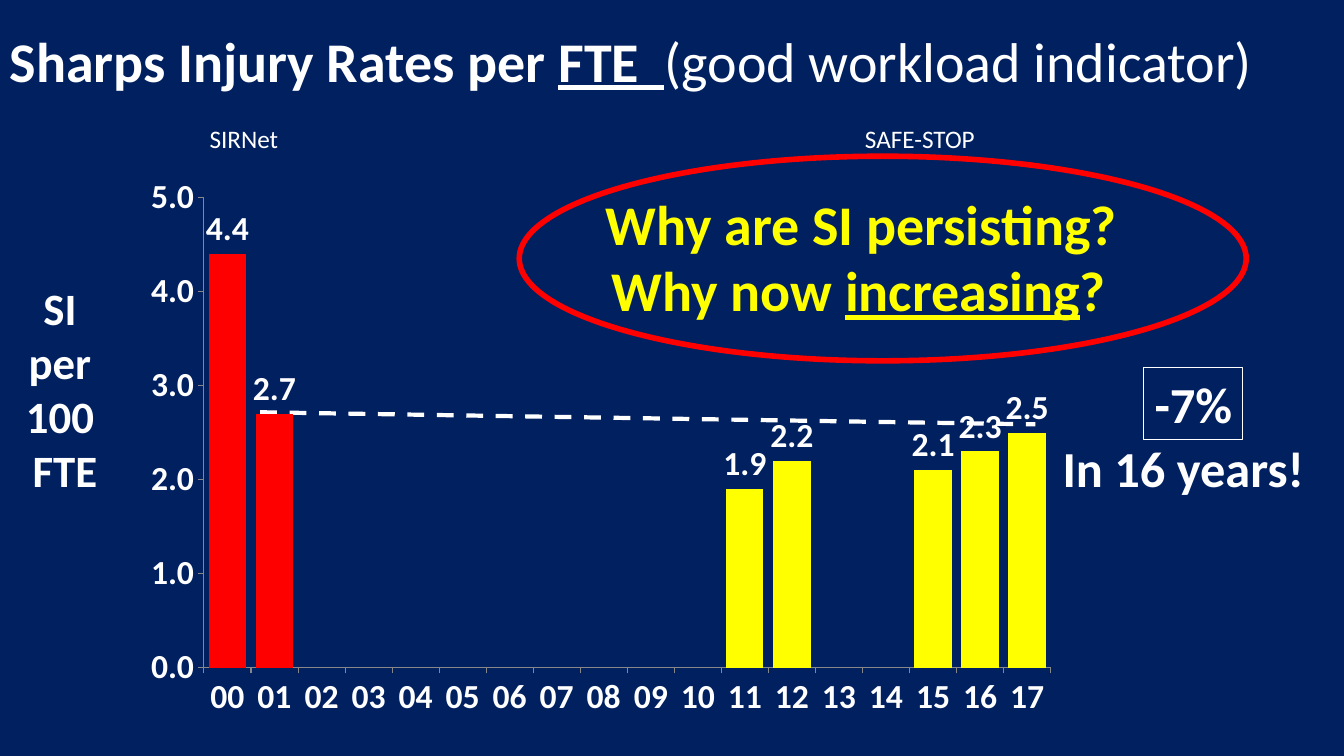
import pptx
import pptx.util
import pptx.dml.color
import pptx.chart.data
import pptx.enum.chart
import pptx.enum.dml
import pptx.enum.shapes
import pptx.enum.text
from lxml import etree

Inches, Pt = pptx.util.Inches, pptx.util.Pt
Shape = pptx.enum.shapes.MSO_SHAPE
Align = pptx.enum.text.PP_ALIGN

FONT = "Calibri"
NAVY, WHITE, RED, YELLOW, GREY = "002060", "FFFFFF", "FF0000", "FFFF00", "878787"

# Each paragraph is a list of (text, format) runs.
UNIT = [[("SI ", {})], [("per ", {})], [("100 ", {})], [("FTE", {})]]
TITLE = [[("Sharps Injury Rates per ", {}), ("FTE  ", {"line": True}),
          ("(good workload indicator)", {"bold": False})]]
WHY = [[("Why are SI persisting?", {})]]
NOW = [[("Why now ", {}), ("increasing", {"line": True}), ("?", {})]]
SPAN = [[("In 16 years!", {})]]
DROP = [[("-7%", {})]]
SOURCES = [("SIRNet", (1.98, 1.17, 0.89, 0.4)),
           ("SAFE-STOP", (8.48, 1.17, 1.36, 0.4))]

YEARS = [f"{year:02d}" for year in range(18)]
RATES = [
    ("Series 1", RED, {"00": 4.4, "01": 2.7}),
    ("Series 2", YELLOW, {"11": 1.9, "12": 2.2, "15": 2.1, "16": 2.3, "17": 2.5}),
]
PLOT = {"x": 0.096, "y": 0.136, "w": 0.903, "h": 0.753}


def rgb(code):
    return pptx.dml.color.RGBColor.from_string(code)


def style(font, size, color=WHITE, bold=True):
    font.name, font.size, font.bold = FONT, Pt(size), bold
    font.color.rgb = rgb(color)


def write(shape, paras, size, color=WHITE, bold=True, align=Align.LEFT):
    frame = shape.text_frame
    frame.word_wrap = False
    frame.auto_size = pptx.enum.text.MSO_AUTO_SIZE.SHAPE_TO_FIT_TEXT
    frame.vertical_anchor = pptx.enum.text.MSO_ANCHOR.TOP
    for i, runs in enumerate(paras):
        para = frame.paragraphs[0] if i == 0 else frame.add_paragraph()
        para.alignment = align
        for text, look in runs:
            run = para.add_run()
            run.text = text
            style(run.font, size, color, look.get("bold", bold))
            run.font.underline = look.get("line", False)


def label(slide, box, paras, size, **look):
    write(slide.shapes.add_textbox(*map(Inches, box)), paras, size, **look)


def outline(slide, kind, box, color, width):
    shape = slide.shapes.add_shape(kind, *map(Inches, box))
    shape.shadow.inherit = False
    shape.fill.background()
    shape.line.color.rgb = rgb(color)
    shape.line.width = Pt(width)
    return shape


def trend(slide, start, end):
    line = slide.shapes.add_connector(
        pptx.enum.shapes.MSO_CONNECTOR.STRAIGHT, *map(Inches, start + end))
    line.line.color.rgb = rgb(WHITE)
    line.line.width = Pt(3)
    line.line.dash_style = pptx.enum.dml.MSO_LINE.DASH
    etree.SubElement(line._element.spPr, pptx.oxml.ns.qn("a:effectLst"))


def place(chart):
    """Fix the inner plot area as fractions of the chart."""
    qn = pptx.oxml.ns.qn
    area = chart._chartSpace.chart.plotArea
    for old in area.findall(qn("c:layout")):
        area.remove(old)
    layout = etree.Element(qn("c:layout"))
    manual = etree.SubElement(layout, qn("c:manualLayout"))
    items = [("layoutTarget", "inner"), ("xMode", "edge"), ("yMode", "edge")]
    for tag, val in items + list(PLOT.items()):
        etree.SubElement(manual, qn("c:" + tag)).set("val", str(val))
    area.insert(0, layout)


def bars(slide, box):
    data = pptx.chart.data.CategoryChartData(number_format="0.0")
    data.categories = YEARS
    for name, _, vals in RATES:
        data.add_series(name, [vals.get(year) for year in YEARS])
    chart = slide.shapes.add_chart(
        pptx.enum.chart.XL_CHART_TYPE.COLUMN_CLUSTERED,
        *map(Inches, box), data).chart
    chart.has_legend = chart.has_title = False
    style(chart.font, 24)
    place(chart)

    plot = chart.plots[0]
    plot.gap_width, plot.overlap = 26, 100
    plot.vary_by_categories = False
    for series, (_, color, _) in zip(plot.series, RATES):
        series.format.fill.solid()
        series.format.fill.fore_color.rgb = rgb(color)
        tags = series.data_labels
        tags.show_value = True
        tags.number_format, tags.number_format_is_linked = "0.0", False
        tags.position = pptx.enum.chart.XL_LABEL_POSITION.OUTSIDE_END
        style(tags.font, 24)

    for axis in (chart.category_axis, chart.value_axis):
        axis.has_major_gridlines = False
        axis.major_tick_mark = pptx.enum.chart.XL_TICK_MARK.OUTSIDE
        axis.format.line.color.rgb = rgb(GREY)
        axis.format.line.width = Pt(0.75)
        style(axis.tick_labels.font, 24)
    scale = chart.value_axis
    scale.minimum_scale, scale.maximum_scale, scale.major_unit = 0, 5, 1
    scale.tick_labels.number_format = "0.0"
    scale.tick_labels.number_format_is_linked = False


def main():
    deck = pptx.Presentation()
    deck.slide_width, deck.slide_height = Inches(13.33), Inches(7.5)
    slide = deck.slides.add_slide(deck.slide_layouts[6])
    slide.background.fill.solid()
    slide.background.fill.fore_color.rgb = rgb(NAVY)

    label(slide, (0.15, 2.74, 0.99, 2.26), UNIT, 32, align=Align.CENTER)
    label(slide, (10.44, 4.29, 2.62, 0.71), SPAN, 36)
    trend(slide, (2.58, 4.09), (10.27, 4.21))
    frame = outline(slide, Shape.RECTANGLE, (11.34, 3.65, 0.98, 0.71), WHITE, 0.75)
    write(frame, DROP, 36, align=Align.RIGHT)
    label(slide, (0, 0.21, 12.65, 0.77), TITLE, 40)
    bars(slide, (1.13, 1.12, 9.3, 6.19))
    for name, box in SOURCES:
        label(slide, box, [[(name, {})]], 18, bold=False)
    label(slide, (5.91, 1.83, 5.33, 0.77), WHY, 40, color=YELLOW)
    outline(slide, Shape.OVAL, (5.15, 1.55, 7.21, 2.03), RED, 4)
    label(slide, (5.97, 2.49, 5.16, 0.77), NOW, 40, color=YELLOW)
    deck.save("out.pptx")


if __name__ == "__main__":
    main()
